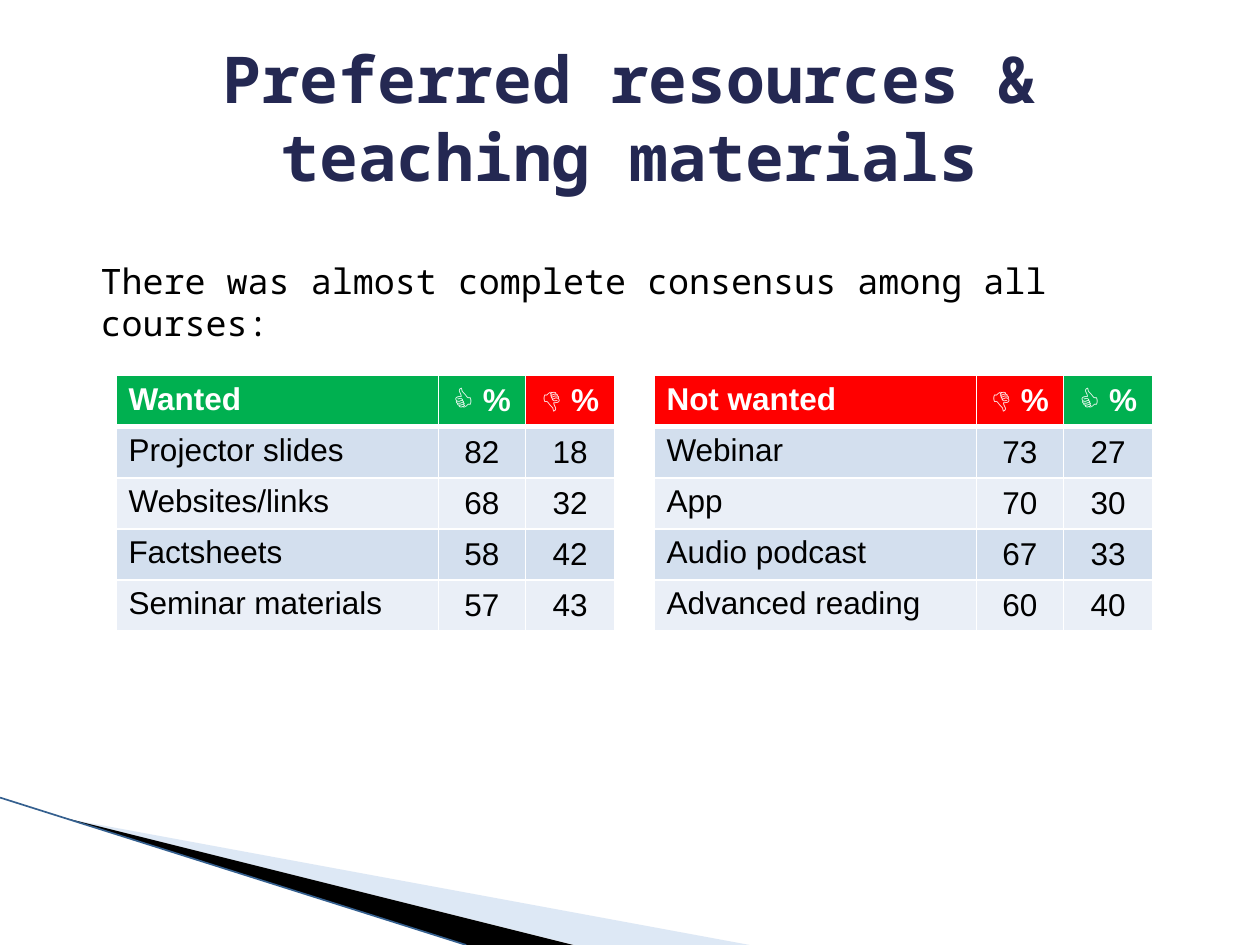
from lxml import etree
from pptx import Presentation
from pptx.dml.color import RGBColor
from pptx.enum.shapes import MSO_CONNECTOR
from pptx.enum.text import MSO_ANCHOR, PP_ALIGN
from pptx.oxml.ns import qn
from pptx.util import Inches, Pt

LEFT, CENTER = PP_ALIGN.LEFT, PP_ALIGN.CENTER
TOP, MIDDLE = MSO_ANCHOR.TOP, MSO_ANCHOR.MIDDLE
STRAIGHT = MSO_CONNECTOR.STRAIGHT

THEME = {
    "mono": "Noto Sans Mono", "sans": "Arial",
    "title_size": 36.9, "body_size": 20, "table_size": 18,
    "navy": "242852", "black": "000000", "white": "FFFFFF",
    "green": "00B050", "red": "FF0000",
    "bands": ["D3DFEE", "EAEFF7"],
    "pale_blue": "ABC6E6", "edge_blue": "35608F",
}

deck = Presentation()
deck.slide_width, deck.slide_height = Inches(10), Inches(7.5)
page = deck.slides.add_slide(deck.slide_layouts[6])

# Lengths are counted on a grid of 100 columns by 100 rows
COLUMN, ROW = deck.slide_width / 100, deck.slide_height / 100


def grid(*lengths):
    """Turn alternating column and row counts into slide lengths."""
    return [round(n * (ROW if i % 2 else COLUMN)) for i, n in enumerate(lengths)]


def write(frame, text, font, size, color, bold=False, align=LEFT):
    """Write one formatted paragraph into a text frame."""
    para = frame.paragraphs[0]
    para.alignment = align
    span = para.add_run()
    span.text = text
    for name, value in {"name": font, "size": Pt(size), "bold": bold}.items():
        setattr(span.font, name, value)
    span.font.color.rgb = RGBColor.from_string(color)


# Corner wedges: points in columns and rows, colour, opacity in percent
wedges = [
    ([(5.5, 86.7), (59.5, 100), (45.6, 100)], THEME["pale_blue"], 40),
    ([(5.3, 86.6), (45.5, 100), (37, 100)], THEME["black"], 100),
]
for points, color, opacity in wedges:
    start, *others = [grid(*point) for point in points]
    builder = page.shapes.build_freeform(*start)
    builder.add_line_segments(others, close=True)
    wedge = builder.convert_to_shape()
    wedge.shadow.inherit = False
    wedge.line.fill.background()
    wedge.fill.solid()
    wedge.fill.fore_color.rgb = RGBColor.from_string(color)
    if opacity < 100:
        tone = wedge.fill._xPr.find(".//" + qn("a:srgbClr"))
        etree.SubElement(tone, qn("a:alpha"), val=str(opacity * 1000))

# Thin line along the lower edge of the wedges
edge = page.shapes.add_connector(STRAIGHT, *grid(0, 84.4, 37, 100))
edge.line.color.rgb = RGBColor.from_string(THEME["edge_blue"])
edge.line.width = Pt(0.95)
etree.SubElement(edge._element.spPr, qn("a:effectLst"))

# Title and introduction
texts = [
    (grid(5, 4, 90, 16.67), MIDDLE, "Preferred resources & teaching materials",
     THEME["title_size"], THEME["navy"], True, CENTER),
    (grid(7, 26.8, 88.8, 6.8), TOP,
     "There was almost complete consensus among all courses:",
     THEME["body_size"], THEME["black"], False, LEFT),
]
for place, anchor, text, size, color, bold, align in texts:
    box = page.shapes.add_textbox(*place)
    box.text_frame.word_wrap = True
    box.text_frame.vertical_anchor = anchor
    write(box.text_frame, text, THEME["mono"], size, color, bold, align)

# Two tables side by side
UP, DOWN = "👍 %", "👎 %"
tables = [
    (9.2, [THEME["green"], THEME["green"], THEME["red"]], [
        ("Wanted", UP, DOWN),
        ("Projector slides", 82, 18),
        ("Websites/links", 68, 32),
        ("Factsheets", 58, 42),
        ("Seminar materials", 57, 43)]),
    (51.9, [THEME["red"], THEME["red"], THEME["green"]], [
        ("Not wanted", DOWN, UP),
        ("Webinar", 73, 27),
        ("App", 70, 30),
        ("Audio podcast", 67, 33),
        ("Advanced reading", 60, 40)]),
]
for left, header_fills, records in tables:
    place = grid(left, 39.73, 39.6, 27.07)
    table = page.shapes.add_table(len(records), 3, *place).table
    for column, width in zip(table.columns, (25.6, 6.9, 7.1)):
        column.width = round(width * COLUMN)
    for r, record in enumerate(records):
        header = r == 0
        for c, value in enumerate(record):
            cell = table.cell(r, c)
            cell.vertical_anchor = MIDDLE if c else TOP
            write(cell.text_frame, str(value), THEME["sans"], THEME["table_size"],
                  THEME["white" if header else "black"], header,
                  CENTER if c else LEFT)
            # White borders, thicker between header and body; they precede the fill
            properties = cell._tc.get_or_add_tcPr()
            for side in "LRTB":
                thick = (header and side == "B") or (r == 1 and side == "T")
                border = etree.SubElement(properties, qn("a:ln" + side),
                                          w=str(Pt(3 if thick else 1)))
                paint = etree.SubElement(border, qn("a:solidFill"))
                etree.SubElement(paint, qn("a:srgbClr"), val=THEME["white"])
            cell.fill.solid()
            fill = header_fills[c] if header else THEME["bands"][(r - 1) % 2]
            cell.fill.fore_color.rgb = RGBColor.from_string(fill)

deck.save("out.pptx")
